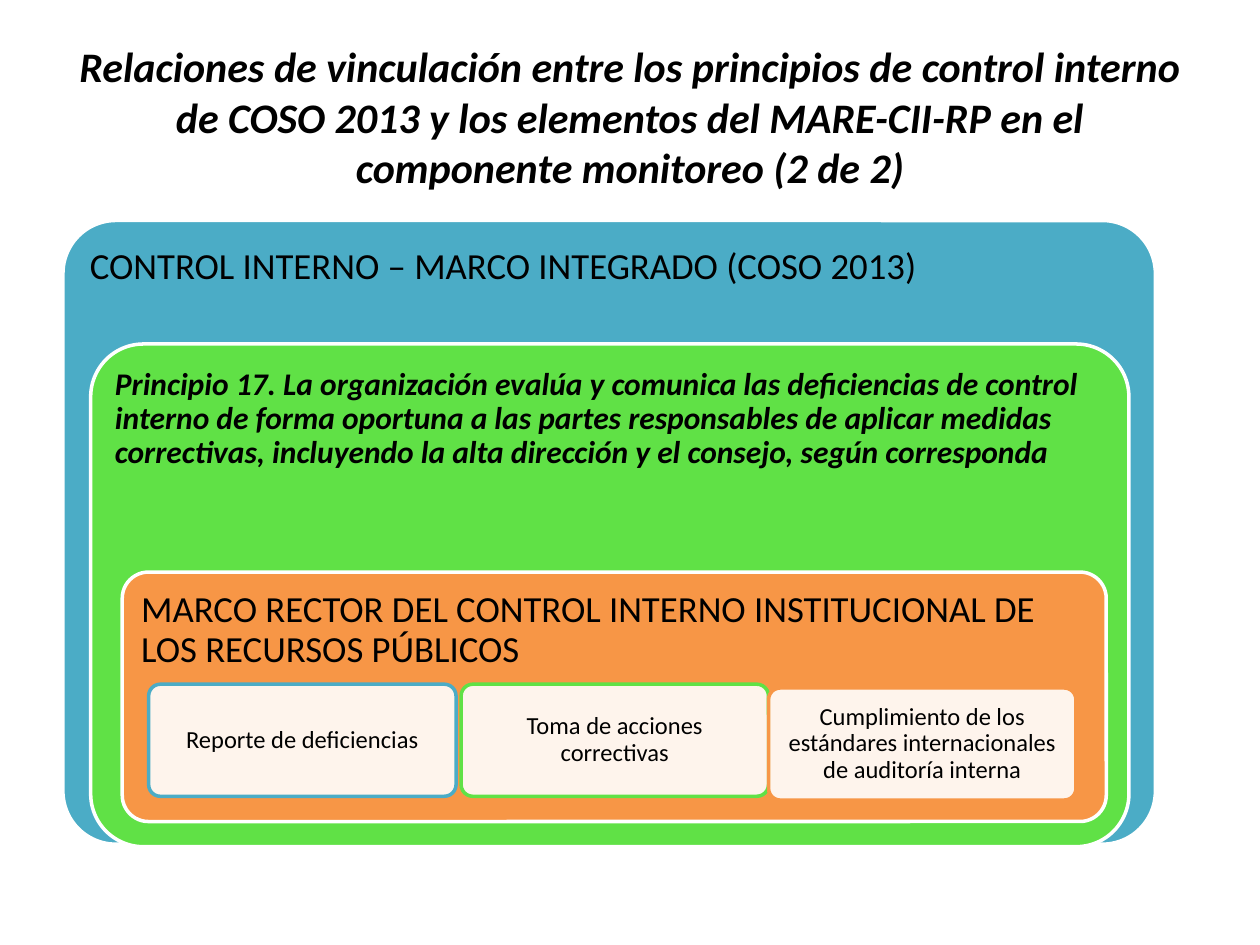
from lxml import etree
from pptx import Presentation
from pptx.dml.color import RGBColor
from pptx.enum import shapes, text
from pptx.oxml.ns import qn
from pptx.util import Inches, Pt

COLORS = {"black": "000000", "white": "FFFFFF", "blue": "4BACC6",
          "green": "60E146", "orange": "F79646"}
FONT = "Calibri"

TITLE = ("Relaciones de vinculación entre los principios de control interno de COSO 2013 "
         "y los elementos del MARE-CII-RP en el componente monitoreo (2 de 2)")

# wording, (left, top, width, height), corner, fill, size, emphasis, inset
LEVELS = [
    ("CONTROL INTERNO – MARCO INTEGRADO (COSO 2013)",
     (0.5, 1.75, 8.67, 4.95), 0.085, "blue", 21, False, 0.09),
    ("Principio 17. La organización evalúa y comunica las deficiencias de control interno "
     "de forma oportuna a las partes responsables de aplicar medidas correctivas, "
     "incluyendo la alta dirección y el consejo, según corresponda",
     (0.72, 2.73, 8.24, 3.99), 0.105, "green", 18, True, 0.07),
    ("MARCO RECTOR DEL CONTROL INTERNO INSTITUCIONAL DE LOS RECURSOS PÚBLICOS",
     (0.97, 4.54, 7.81, 1.98), 0.105, "orange", 21, False, 0.09),
]

# wording, left, top, outline
ELEMENTS = [
    ("Reporte de deficiencias", 1.18, 5.43, "blue"),
    ("Toma de acciones correctivas", 3.66, 5.43, "green"),
    ("Cumplimiento de los estándares internacionales de auditoría interna",
     6.1, 5.46, "orange"),
]
ELEMENT_SIZE = (2.44, 0.89)


def rgb(name):
    return RGBColor.from_string(COLORS[name])


def format_text(frame, size, emphasis, align):
    paragraph = frame.paragraphs[0]
    paragraph.alignment = align
    font = paragraph.runs[0].font
    font.name, font.size = FONT, Pt(size)
    font.bold = font.italic = emphasis
    font.color.rgb = rgb("black")


def add_panel(slide, wording, place, corner, fill, outline, size, emphasis,
              inset, align, anchor):
    panel = slide.shapes.add_shape(shapes.MSO_SHAPE.ROUNDED_RECTANGLE,
                                   *map(Inches, place))
    panel.adjustments[0] = corner
    panel.shadow.inherit = False
    panel.fill.solid()
    panel.fill.fore_color.rgb = rgb(fill)
    panel.line.color.rgb = rgb(outline)
    panel.line.width = Pt(2)

    frame = panel.text_frame
    frame.word_wrap = True
    frame.vertical_anchor = anchor
    frame.margin_left = frame.margin_right = Inches(inset)
    frame.margin_top = frame.margin_bottom = Inches(inset)
    frame.text = wording
    frame.paragraphs[0].line_spacing = 0.9
    format_text(frame, size, emphasis, align)
    return panel


def set_opacity(panel, percent):
    color = panel.fill._xPr.find(qn("a:solidFill"))[0]
    etree.SubElement(color, qn("a:alpha"), val=str(percent * 1000))


def main():
    deck = Presentation()
    deck.slide_width, deck.slide_height = Inches(10), Inches(7.5)
    slide = deck.slides.add_slide(deck.slide_layouts[5])

    title = slide.shapes.title
    title.left, title.top, title.width, title.height = map(Inches, (0.5, 0.3, 9, 1.25))
    title.text_frame.text = TITLE
    title.text_frame.vertical_anchor = text.MSO_ANCHOR.MIDDLE
    format_text(title.text_frame, 24, True, text.PP_ALIGN.CENTER)

    for wording, place, corner, fill, size, emphasis, inset in LEVELS:
        add_panel(slide, wording, place, corner, fill, "white", size, emphasis,
                  inset, text.PP_ALIGN.LEFT, text.MSO_ANCHOR.TOP)

    for wording, left, top, outline in ELEMENTS:
        element = add_panel(slide, wording, (left, top, *ELEMENT_SIZE), 0.105,
                            "white", outline, 14, False, 0.06,
                            text.PP_ALIGN.CENTER, text.MSO_ANCHOR.MIDDLE)
        set_opacity(element, 90)

    deck.save("out.pptx")


if __name__ == "__main__":
    main()
